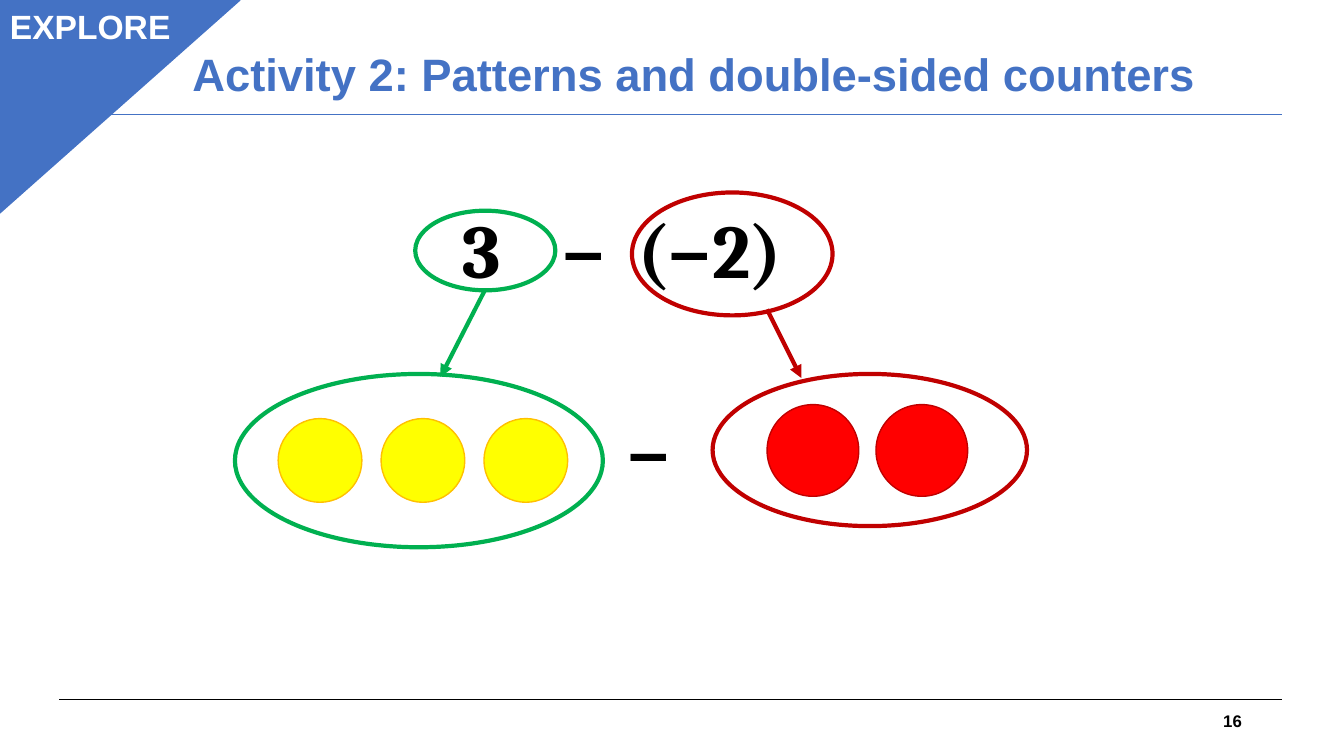
from dataclasses import dataclass

from lxml import etree
from pptx import Presentation
from pptx import util as u
from pptx.dml.color import RGBColor
from pptx.enum import shapes, text
from pptx.oxml.ns import qn

BLUE, BLACK, WHITE = "4472C4", "000000", "FFFFFF"
GREEN, DARK_RED = "00B050", "C00000"
YELLOW, AMBER, RED = "FFFF00", "FFC000", "FF0000"
OVAL = shapes.MSO_SHAPE.OVAL


@dataclass
class Box:
    left: float
    top: float
    width: float
    height: float

    def lengths(self) -> list:
        return [u.Pt(v) for v in (self.left, self.top, self.width, self.height)]


@dataclass
class Label:
    words: str
    box: Box
    size: float
    font: str = "Arial"
    color: str = BLACK
    align: text.PP_ALIGN = text.PP_ALIGN.LEFT
    anchor: text.MSO_ANCHOR = text.MSO_ANCHOR.TOP
    spacing: float = 1.0


@dataclass
class Line:
    start: tuple[float, float]
    end: tuple[float, float]
    color: str
    weight: float = 0.75
    arrow: bool = False


@dataclass
class Counters:
    count: int
    left: float
    top: float
    size: float
    pitch: float
    fill: str
    outline: str


def rgb(color: str) -> RGBColor:
    return RGBColor.from_string(color)


def draw_shape(slide, kind: shapes.MSO_SHAPE, box: Box, outline: str,
               weight: float, fill: str | None = None):
    shape = slide.shapes.add_shape(kind, *box.lengths())
    shape.shadow.inherit = False
    if fill:
        shape.fill.solid()
        shape.fill.fore_color.rgb = rgb(fill)
    else:
        shape.fill.background()
    shape.line.color.rgb = rgb(outline)
    shape.line.width = u.Pt(weight)
    return shape


def write(shape, label: Label) -> None:
    frame = shape.text_frame
    frame.word_wrap = True
    frame.vertical_anchor = label.anchor
    paragraph = frame.paragraphs[0]
    paragraph.text = label.words
    paragraph.alignment = label.align
    paragraph.line_spacing = label.spacing
    font = paragraph.font
    font.name, font.size, font.bold = label.font, u.Pt(label.size), True
    font.color.rgb = rgb(label.color)


def draw_label(slide, label: Label) -> None:
    write(slide.shapes.add_textbox(*label.box.lengths()), label)


def draw_line(slide, line: Line) -> None:
    ends = [u.Pt(v) for v in (*line.start, *line.end)]
    connector = slide.shapes.add_connector(shapes.MSO_CONNECTOR.STRAIGHT, *ends)
    connector.line.color.rgb = rgb(line.color)
    connector.line.width = u.Pt(line.weight)
    properties = connector.element.spPr
    if line.arrow:
        etree.SubElement(properties.find(qn("a:ln")), qn("a:tailEnd"), type="triangle")
    etree.SubElement(properties, qn("a:effectLst"))


def draw_counters(slide, row: Counters) -> None:
    for i in range(row.count):
        box = Box(row.left + i * row.pitch, row.top, row.size, row.size)
        draw_shape(slide, OVAL, box, row.outline, 1, row.fill)


RULES = [
    Line((42.5, 499.7), (915.8, 499.7), BLACK),
    Line((42.5, 82.1), (915.8, 82.1), BLUE),
]
EXPLORE = Label("EXPLORE", Box(-0.7, 0.7, 130.3, 36), 24, color=WHITE,
                align=text.PP_ALIGN.CENTER)
HEADINGS = [
    Label("Activity 2: Patterns and double-sided counters",
          Box(130.3, 15.1, 738.7, 79.9), 32.4, color=BLUE,
          anchor=text.MSO_ANCHOR.MIDDLE, spacing=0.9),
    Label("16", Box(678.2, 500.4, 216, 28.8), 12, align=text.PP_ALIGN.RIGHT,
          anchor=text.MSO_ANCHOR.MIDDLE),
]
EXPRESSION = [
    Label(words, Box(left, top, width, 72.7), 54, "Cambria")
    for words, left, top, width in [
        ("3", 323, 141.1, 60),
        ("−", 394, 141.1, 57.6),
        ("(−2)", 448, 141.1, 142),
        ("−", 440.6, 285.1, 57.6),
    ]
]
COUNTERS = [
    Counters(3, 198.7, 299, 59.8, 73.5, YELLOW, AMBER),
    Counters(2, 547.9, 289, 65.5, 77.8, RED, DARK_RED),
]
RINGS = [
    (Box(296.6, 150.5, 100.1, 56.9), GREEN),
    (Box(167.8, 267.1, 262.8, 123.8), GREEN),
    (Box(451.4, 137.5, 143.3, 87.8), DARK_RED),
    (Box(509, 267.1, 224.6, 108.7), DARK_RED),
]
ARROWS = [
    Line((346.3, 207.4), (314.6, 269.3), GREEN, 3, True),
    Line((547.9, 221), (572.4, 270), DARK_RED, 3, True),
]


def main() -> None:
    deck = Presentation()
    deck.slide_width, deck.slide_height = u.Pt(960), u.Pt(540)
    slide = deck.slides.add_slide(deck.slide_layouts[6])

    # Header and footer rules
    for rule in RULES:
        draw_line(slide, rule)

    # Corner flag: a right triangle turned so its square corner is top left
    flag = draw_shape(slide, shapes.MSO_SHAPE.RIGHT_TRIANGLE,
                      Box(9, -9.7, 152.6, 172.1), BLUE, 1, BLUE)
    flag.rotation = 90
    banner = draw_shape(slide, shapes.MSO_SHAPE.RECTANGLE, EXPLORE.box,
                        BLUE, 0.75, BLUE)
    write(banner, EXPLORE)

    # Title, page number and expression
    for label in HEADINGS + EXPRESSION:
        draw_label(slide, label)

    # Counters, with rings and arrows tying them to the numbers
    for row in COUNTERS:
        draw_counters(slide, row)
    for box, color in RINGS:
        draw_shape(slide, OVAL, box, color, 3)
    for arrow in ARROWS:
        draw_line(slide, arrow)

    deck.save("out.pptx")


if __name__ == "__main__":
    main()
